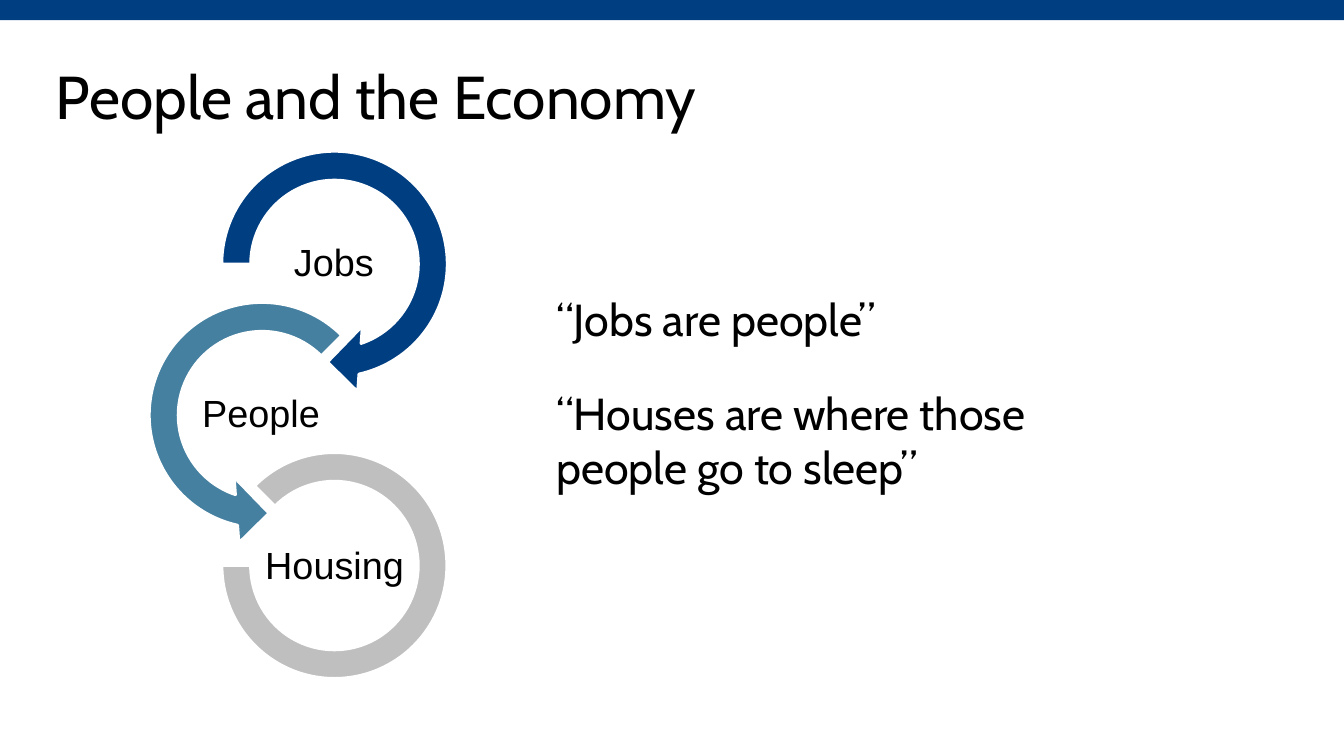
from pptx import Presentation
from pptx.dml.color import RGBColor
from pptx.enum.shapes import MSO_SHAPE
from pptx.enum.text import MSO_ANCHOR, PP_ALIGN
from pptx.util import Pt

NAVY = RGBColor(0x00, 0x3E, 0x82)
TEAL = RGBColor(0x45, 0x80, 0xA1)
GREY = RGBColor(0xBF, 0xBF, 0xBF)
WHITE = RGBColor(0xFF, 0xFF, 0xFF)
BLACK = RGBColor(0x00, 0x00, 0x00)

ARROW_SIZE = (187.2, 187.2)
RING_SIZE = (160.6, 161.3)
LABEL_SIZE = (103.7, 51.8)

# Label, label centre, shape, shape centre, shape size, adjustments, colour
STAGES = [
    ("Jobs", (238.5, 188.6), MSO_SHAPE.CIRCULAR_ARROW, (239, 188.6),
     ARROW_SIZE, (0.11, 11.42, 45, 108, 0.125), NAVY),
    ("People", (186.5, 296.8), MSO_SHAPE.LEFT_CIRCULAR_ARROW, (187.2, 296.6),
     ARROW_SIZE, (0.11, 11.42, 63, 189, 0.125), TEAL),
    ("Housing", (239, 405.2), MSO_SHAPE.BLOCK_ARC, (238.9, 404),
     RING_SIZE, (135, 108, 0.127), GREY),
]
QUOTES = ["“Jobs are people”", "“Houses are where those people go to sleep”"]


def box_around(center, size):
    """Return left, top, width and height of a box from its centre."""
    (x, y), (w, h) = center, size
    return Pt(x - w / 2), Pt(y - h / 2), Pt(w), Pt(h)


def set_insets(tf, inset):
    tf.margin_left = tf.margin_top = tf.margin_right = tf.margin_bottom = Pt(inset)


def set_font(p, name, size):
    p.font.name = name
    p.font.size = Pt(size)
    p.font.color.rgb = BLACK


def add_filled(shapes, kind, box, color):
    sp = shapes.add_shape(kind, *box)
    sp.shadow.inherit = False
    sp.fill.solid()
    sp.fill.fore_color.rgb = color
    sp.line.fill.background()
    return sp


def add_arc(shapes, kind, box, adjustments, color):
    sp = add_filled(shapes, kind, box, color)
    for i, value in enumerate(adjustments):
        sp.adjustments[i] = value
    sp.line.color.rgb = WHITE
    sp.line.width = Pt(2)


def add_label(shapes, text, box):
    tf = shapes.add_textbox(*box).text_frame
    tf.word_wrap = True
    tf.vertical_anchor = MSO_ANCHOR.MIDDLE
    set_insets(tf, 1.4)
    p = tf.paragraphs[0]
    p.text = text
    p.alignment = PP_ALIGN.CENTER
    p.line_spacing = 0.9
    set_font(p, "Arial", 27)


def add_cycle(s):
    shapes = s.shapes.add_group_shape().shapes
    for text, label_at, kind, arc_at, size, adjustments, color in STAGES:
        add_arc(shapes, kind, box_around(arc_at, size), adjustments, color)
        add_label(shapes, text, box_around(label_at, LABEL_SIZE))


def set_title(s, text):
    title = s.shapes.title
    title.left, title.top = Pt(32.4), Pt(35.3)
    title.width, title.height = Pt(894.2), Pt(60.5)
    tf = title.text_frame
    tf.vertical_anchor = MSO_ANCHOR.TOP
    set_insets(tf, 7.2)
    p = tf.paragraphs[0]
    p.text = text
    p.alignment = PP_ALIGN.LEFT
    set_font(p, "Cabin", 43.2)


def add_quotes(s):
    tf = s.shapes.add_textbox(Pt(390.2), Pt(204.5), Pt(447), Pt(152.6)).text_frame
    tf.word_wrap = True
    for i, quote in enumerate(QUOTES):
        p = tf.add_paragraph() if i else tf.paragraphs[0]
        p.text = quote
        p.space_before = Pt(29 if i else 0)
        set_font(p, "Cabin", 32)


def main():
    prs = Presentation()
    prs.slide_width, prs.slide_height = Pt(960), Pt(540)
    s = prs.slides.add_slide(prs.slide_layouts[5])
    add_filled(s.shapes, MSO_SHAPE.RECTANGLE, (0, 0, Pt(960), Pt(14.4)), NAVY)
    add_cycle(s)
    set_title(s, "People and the Economy")
    add_quotes(s)
    prs.save("out.pptx")


if __name__ == "__main__":
    main()
